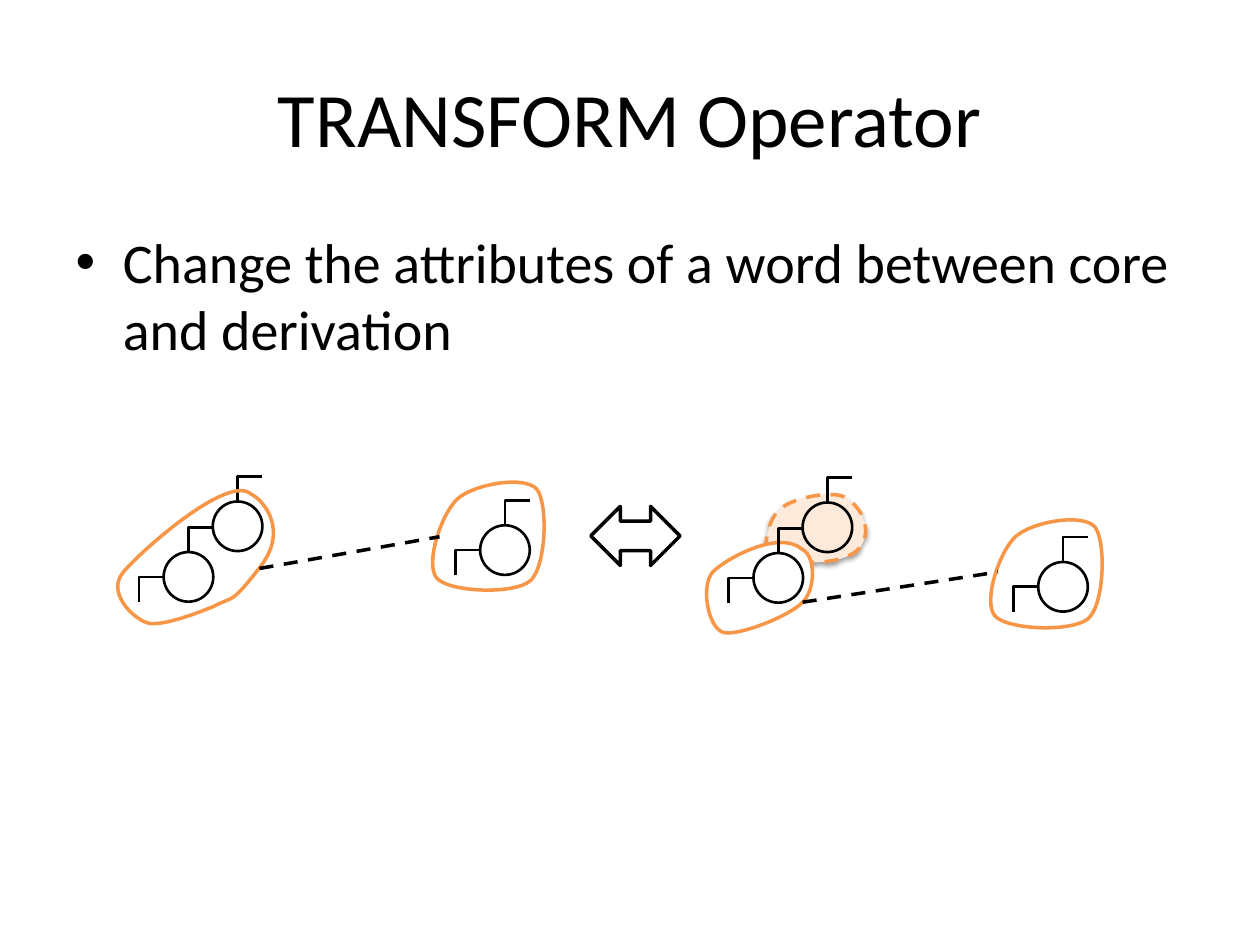
from lxml import etree
from pptx import Presentation
from pptx.dml.color import RGBColor
from pptx.enum.dml import MSO_LINE
from pptx.enum.shapes import MSO_CONNECTOR, MSO_SHAPE
from pptx.enum.text import MSO_ANCHOR, PP_ALIGN
from pptx.oxml import parse_xml
from pptx.oxml.ns import nsdecls, qn
from pptx.util import Cm, Pt

DASH, SOLID = MSO_LINE.DASH, MSO_LINE.SOLID
ELBOW, STRAIGHT = MSO_CONNECTOR.ELBOW, MSO_CONNECTOR.STRAIGHT
OVAL, DOUBLE_ARROW = MSO_SHAPE.OVAL, MSO_SHAPE.LEFT_RIGHT_ARROW
BLACK = RGBColor(0x00, 0x00, 0x00)
WHITE = RGBColor(0xFF, 0xFF, 0xFF)
ORANGE = RGBColor(0xF7, 0x96, 0x46)
PEACH = RGBColor(0xFD, 0xEA, 0xDA)

# Content; all lengths are in centimetres
TITLE = "TRANSFORM Operator"
BODY = "Change the attributes of a word between core and derivation"
TEXTS = [  # text, box, format values, alignment, anchor
    (TITLE, (1.27, 0.76, 22.86, 3.18), {"size": Pt(44), "name": "Calibri"},
     PP_ALIGN.CENTER, MSO_ANCHOR.MIDDLE),
    (BODY, (1.27, 4.45, 22.86, 12.57), {"size": Pt(32), "name": "Calibri"},
     PP_ALIGN.LEFT, MSO_ANCHOR.TOP),
]

DIAMETER, HOOK = 1.0, 0.5
NODES = [  # left, top, has a lower hook
    (3.30, 11.13, True), (4.29, 10.11, False), (9.68, 10.59, True),
    (15.19, 11.15, True), (16.18, 10.13, False), (20.93, 11.33, True),
]
RELATIONS = [((5.23, 11.46), (8.86, 10.82)), ((16.18, 12.14), (20.12, 11.53))]
ARROW_BOX = (11.91, 10.21, 1.80, 1.19)

# Outlines: size, start point, then curves of two control points and an end
PAIR = ((3.12, 2.67), (2.67, 0.08), [
    (2.21, -0.33, 0.46, 1.22, 0.10, 1.65), (-0.25, 2.06, 0.28, 2.57, 0.56, 2.67),
    (0.81, 2.77, 1.52, 2.51, 1.93, 2.34), (2.31, 2.13, 2.24, 2.34, 2.84, 1.57),
    (3.45, 0.81, 2.92, 0.20, 2.67, 0.08)])
SINGLE = ((2.49, 2.41), (2.26, 0.28), [
    (2.01, 0, 0.99, 0.18, 0.66, 0.48), (0.33, 0.79, 0, 1.80, 0.25, 2.08),
    (0.51, 2.36, 1.80, 2.41, 2.13, 2.13), (2.46, 1.83, 2.49, 0.56, 2.26, 0.28)])
ATTRIBUTE = ((2.01, 1.37), (0, 1.12), [
    (0, 0.79, 0.08, 0.41, 0.36, 0.23), (0.61, 0.05, 1.35, -0.10, 1.60, 0.05),
    (1.85, 0.18, 2.18, 0.64, 1.91, 1.04), (1.60, 1.45, 0.61, 1.35, 0.61, 1.35)])
CORE = ((2.34, 2.16), (2.06, 0.41), [
    (1.60, 0, 0.53, 0.58, 0.25, 0.86), (0, 1.14, 0.15, 1.98, 0.46, 2.08),
    (0.76, 2.16, 1.80, 1.75, 2.06, 1.47), (2.34, 1.19, 2.31, 0.53, 2.06, 0.41)])
# outline, left, top, fill, dash
FILLED_OUTLINES = [(ATTRIBUTE, 15.44, 9.98, PEACH, DASH),
                   (CORE, 14.12, 10.67, WHITE, SOLID)]
OPEN_OUTLINES = [(PAIR, 2.39, 9.88, None, SOLID),
                 (SINGLE, 8.56, 9.58, None, SOLID),
                 (SINGLE, 19.81, 10.34, None, SOLID)]


def lengths(values):
    return [Cm(value) for value in values]


def style_line(shape, color, width, dash=SOLID):
    shape.line.color.rgb = color
    shape.line.width = Pt(width)
    shape.line.dash_style = dash


def style_shape(shape, color, width, fill=None, dash=SOLID):
    shape.shadow.inherit = False
    if fill is None:
        shape.fill.background()
    else:
        shape.fill.solid()
        shape.fill.fore_color.rgb = fill
    style_line(shape, color, width, dash)


def add_line(slide, kind, start, end, width, dash=SOLID):
    line = slide.shapes.add_connector(kind, *lengths(start + end))
    style_line(line, BLACK, width, dash)
    etree.SubElement(line._element.spPr, qn("a:effectLst"))
    return line


def add_hook(slide, left, bottom):
    """Draw an elbow that goes up from its lower left, then right."""
    hook = add_line(slide, ELBOW, (left + HOOK, bottom), (left, bottom - HOOK), 1.5)
    properties = hook._element.spPr
    properties.find(qn("a:prstGeom")).set("prst", "bentConnector2")
    properties.find(qn("a:xfrm")).set("rot", "5400000")


def add_node(slide, left, top, has_lower_hook):
    circle = slide.shapes.add_shape(OVAL, *lengths((left, top, DIAMETER, DIAMETER)))
    style_shape(circle, BLACK, 1.5)
    add_hook(slide, left + DIAMETER / 2, top)
    if has_lower_hook:
        add_hook(slide, left - HOOK, top + DIAMETER / 2 + HOOK)


def add_outline(slide, outline, left, top, fill, dash):
    (width, height), start, curves = outline
    # The box fixes the frame; its edges then give way to the curves
    builder = slide.shapes.build_freeform(0, 0, scale=Cm(1) / 100)
    builder.add_line_segments([(width * 100, 0), (width * 100, height * 100),
                               (0, height * 100)])
    shape = builder.convert_to_shape(Cm(left), Cm(top))
    outline_path = next(shape._element.iter(qn("a:path")))
    for child in list(outline_path):
        outline_path.remove(child)
    for tag, numbers in [("a:moveTo", start)] + [("a:cubicBezTo", c) for c in curves]:
        step = etree.SubElement(outline_path, qn(tag))
        for x, y in zip(numbers[::2], numbers[1::2]):
            etree.SubElement(step, qn("a:pt"), x=str(round(x * 100)), y=str(round(y * 100)))
    if curves[-1][-2:] == start:
        etree.SubElement(outline_path, qn("a:close"))
    style_shape(shape, ORANGE, 2, fill, dash)
    return shape


def add_shadow(shape):
    effects = shape._element.spPr.find(qn("a:effectLst"))
    effects.append(parse_xml(
        f'<a:outerShdw {nsdecls("a")} blurRad="{Pt(3.1)}" dist="{Pt(1.6)}" '
        'dir="5400000" rotWithShape="0"><a:srgbClr val="000000">'
        '<a:alpha val="38000"/></a:srgbClr></a:outerShdw>'))


def fill_placeholder(placeholder, text, box, formats, alignment, anchor):
    placeholder.left, placeholder.top, placeholder.width, placeholder.height = lengths(box)
    frame = placeholder.text_frame
    frame.text = text
    frame.vertical_anchor = anchor
    paragraph = frame.paragraphs[0]
    paragraph.alignment = alignment
    font = paragraph.runs[0].font
    for name, value in formats.items():
        setattr(font, name, value)
    font.color.rgb = BLACK


def main():
    presentation = Presentation()
    presentation.slide_width, presentation.slide_height = Cm(25.4), Cm(19.05)
    slide = presentation.slides.add_slide(presentation.slide_layouts[1])

    # Title and bullet
    for placeholder, content in zip(slide.placeholders, TEXTS):
        fill_placeholder(placeholder, *content)

    # Words: filled outlines behind the nodes, open ones in front
    attribute, _ = [add_outline(slide, *outline) for outline in FILLED_OUTLINES]
    add_shadow(attribute)
    for node in NODES:
        add_node(slide, *node)
    for outline in OPEN_OUTLINES:
        add_outline(slide, *outline)

    # Relations and the arrow between the two states
    for start, end in RELATIONS:
        add_line(slide, STRAIGHT, start, end, 2, DASH)
    arrow = slide.shapes.add_shape(DOUBLE_ARROW, *lengths(ARROW_BOX))
    style_shape(arrow, BLACK, 2)

    presentation.save("out.pptx")


if __name__ == "__main__":
    main()
